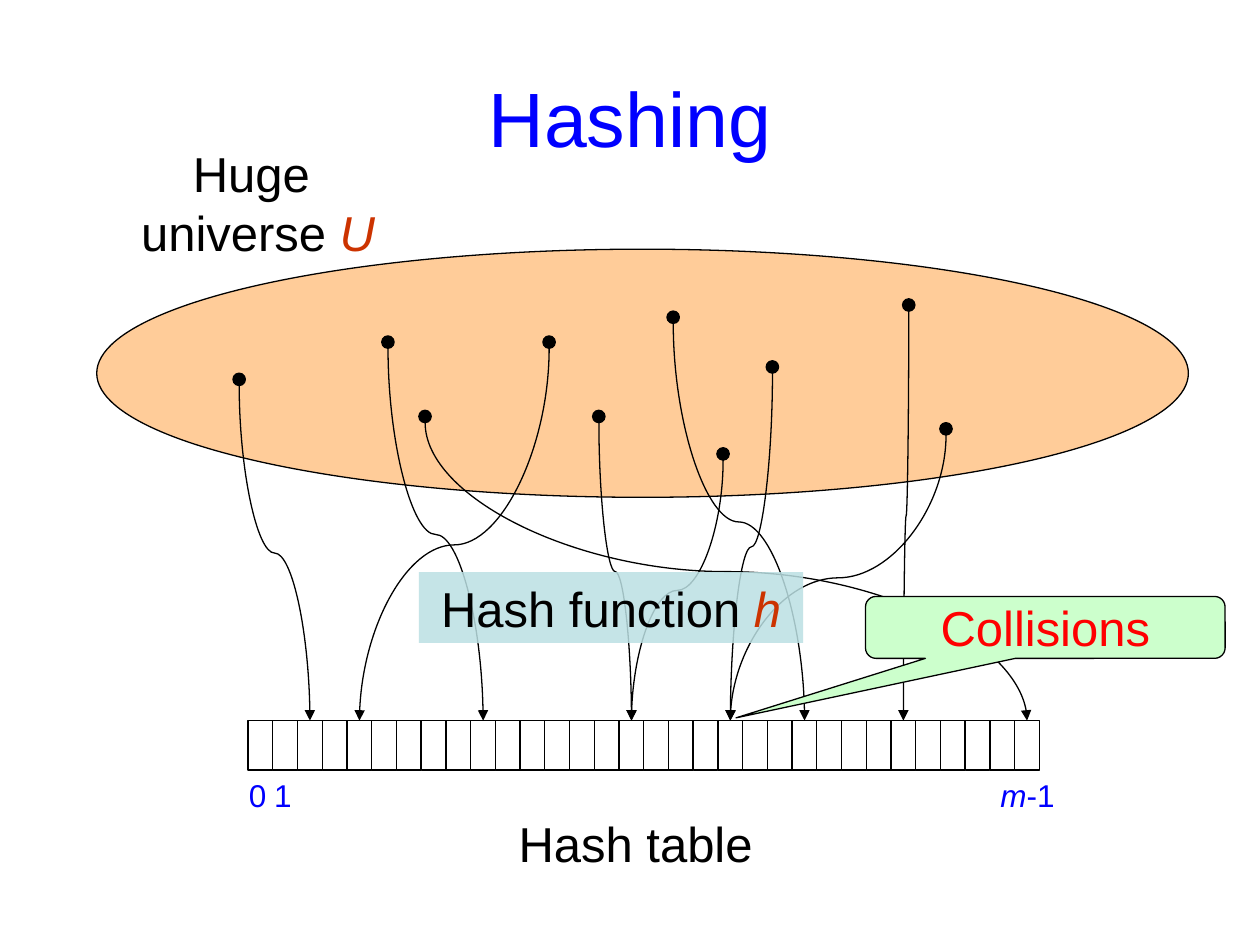
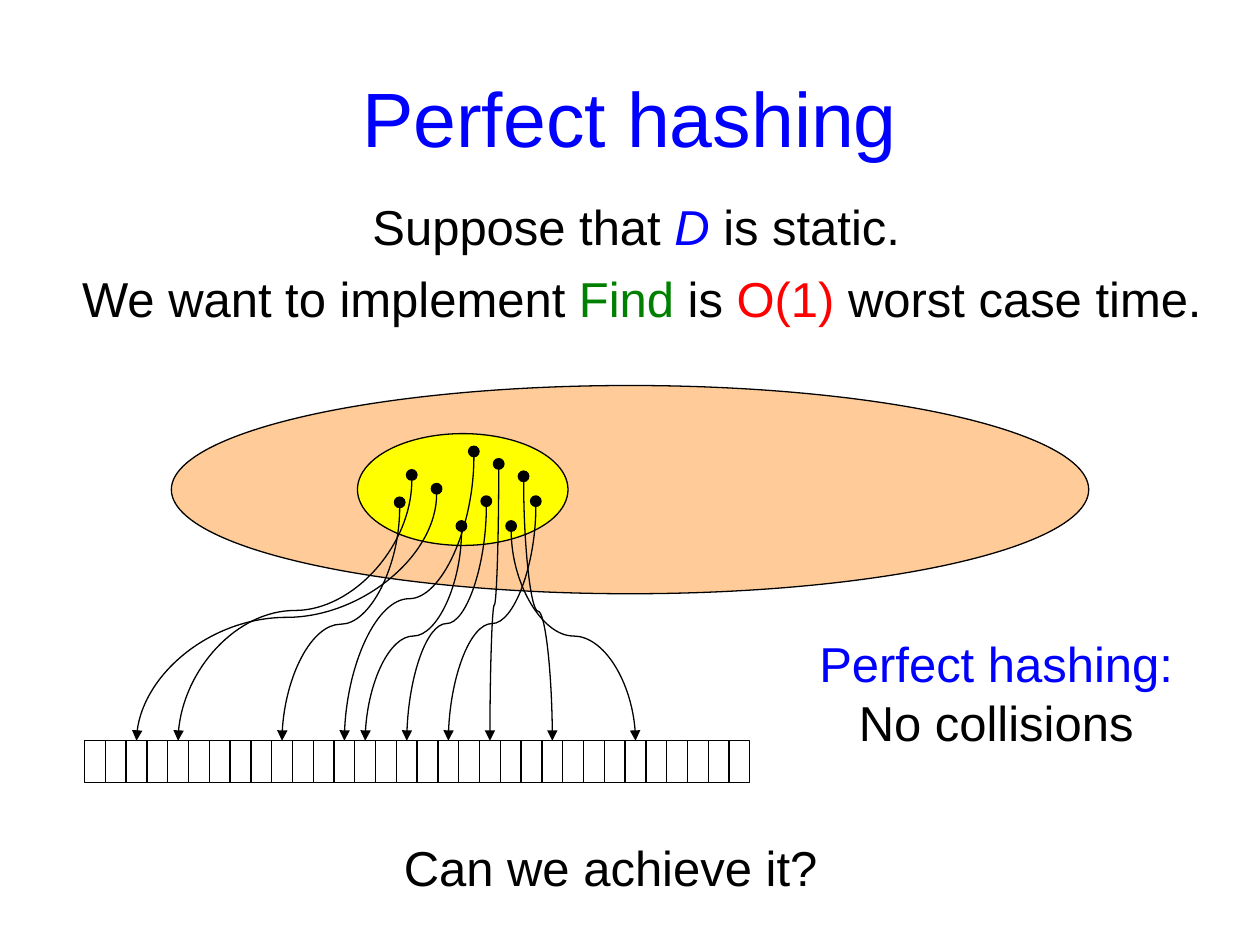
import pptx
import pptx.util
import pptx.dml.color
import pptx.enum.shapes
import pptx.enum.text
import pptx.oxml.ns
import pptx.oxml.xmlchemy

Pt = pptx.util.Pt
qn = pptx.oxml.ns.qn
Node = pptx.oxml.xmlchemy.OxmlElement
Kind = pptx.enum.shapes.MSO_SHAPE
Anchor = pptx.enum.text.MSO_ANCHOR

HUES = {
    "black": "000000",
    "blue": "0000FF",
    "rust": "CC3300",
    "green": "008000",
    "red": "FF0000",
    "peach": "FFCC99",
    "yellow": "FFFF00",
    "teal": "BBE0E3",
    "mint": "CCFFCC",
}
HUES = {name: pptx.dml.color.RGBColor.from_string(code) for name, code in HUES.items()}
FRAME = {"word_wrap": True, "auto_size": pptx.enum.text.MSO_AUTO_SIZE.NONE}
FONT = {"name": "Arial", "bold": False}
CELLS = 32


def draw(page, kind, box, fill=None, edge="black"):
    """Add a preset shape with an optional fill and outline."""
    shape = page.shapes.add_shape(kind, *map(Pt, box))
    shape.shadow.inherit = False
    if fill:
        shape.fill.solid()
        shape.fill.fore_color.rgb = HUES[fill]
    else:
        shape.fill.background()
    if edge:
        shape.line.color.rgb = HUES[edge]
        shape.line.width = Pt(0.75)
    else:
        shape.line.fill.background()
    return shape


def write(shape, runs, size=28, anchor=Anchor.TOP):
    """Fill a shape with centred runs of (text, hue) or (text, hue, italic)."""
    frame = shape.text_frame
    for key, value in {**FRAME, "vertical_anchor": anchor}.items():
        setattr(frame, key, value)
    para = frame.paragraphs[0]
    para.alignment = pptx.enum.text.PP_ALIGN.CENTER
    for text, hue, *slant in runs:
        for row, part in enumerate(text.split("\n")):
            if row:
                para.add_line_break()
            if part:
                run = para.add_run()
                run.text = part
                look = {**FONT, "size": Pt(size), "italic": bool(slant)}
                for key, value in look.items():
                    setattr(run.font, key, value)
                run.font.color.rgb = HUES[hue]


# Each key is (x, y, slot): the centre of its dot and the cell it hashes to
PAGES = [
    {
        "title": "Hashing",
        "ovals": [((55.3, 142.4, 623.8, 141.8), "peach")],
        "dot": 7.1,
        "cell": (141.8, 411.8, 14.13, 28.3),
        "keys": [
            (136.7, 216.8, 2), (221.7, 195.5, 9), (242.9, 238, 31),
            (313.8, 195.5, 4), (384.7, 181.3, 22), (540.6, 245.1, 19),
            (413.2, 259.4, 15), (519.3, 174.3, 26), (441.4, 209.7, 19),
            (342.2, 238, 15),
        ],
        "bends": {3: 0.528},
        "texts": [
            ((33.8, 78.5, 219.6, 74.2), 28,
             [("Huge\n universe ", "black"), ("U", "rust", True)]),
            ((253.4, 461.5, 219.6, 41), 28, [("Hash table", "black")]),
            ((133.2, 439.9, 28.1, 28.8), 18, [("0", "blue")]),
            ((147.6, 439.9, 28.1, 28.8), 18, [("1", "blue")]),
            ((562.3, 439.9, 49.7, 28.8), 18,
             [("m", "blue", True), ("-1", "blue")]),
        ],
    },
    {
        "title": "Perfect hashing",
        "ovals": [((97.9, 220.3, 524.2, 119), "peach"),
                  ((204.3, 247.8, 120.3, 63.9), "yellow")],
        "dot": 6,
        "cell": (48.3, 423.3, 11.88, 23.8),
        "keys": [
            (249.5, 279.3, 2), (228.4, 287.1, 9), (270.8, 258, 12),
            (235.3, 271.4, 4), (299.2, 272.2, 22), (285, 265.1, 19),
            (277.9, 286.4, 15), (292.1, 300.6, 26), (306.2, 286.4, 17),
            (263.7, 300.6, 13),
        ],
        "bends": {},
        "texts": [
            ((126, 108.7, 475.2, 41), 28,
             [("Suppose that ", "black"), ("D", "blue", True),
              (" is static.", "black")]),
            ((33.8, 149.8, 666, 41), 28,
             [("We want to implement ", "black"), ("Find", "green"),
              (" is ", "black"), ("O(1)", "red"),
              (" worst case time.", "black")]),
            ((459.4, 358.6, 219.6, 74.2), 28,
             [("Perfect hashing:\n", "blue"), ("No collisions", "black")]),
            ((104.4, 475.2, 488.9, 41), 28, [("Can we achieve it?", "black")]),
        ],
    },
]

deck = pptx.Presentation()
deck.slide_width, deck.slide_height = Pt(720), Pt(540)

for plan in PAGES:
    page = deck.slides.add_slide(deck.slide_layouts[6])

    # Universe and its subset
    for box, hue in plan["ovals"]:
        draw(page, Kind.OVAL, box, hue)

    # Title and captions
    title = page.shapes.add_textbox(Pt(36), Pt(21.6), Pt(648), Pt(90))
    write(title, [(plan["title"], "blue")], 44, Anchor.MIDDLE)
    for box, size, runs in plan["texts"]:
        write(page.shapes.add_textbox(*map(Pt, box)), runs, size)

    # Keys
    dot = plan["dot"]
    for x, y, slot in plan["keys"]:
        draw(page, Kind.OVAL, (x - dot / 2, y - dot / 2, dot, dot), "black")

    # Arrows from keys to cells: a sideways curve, turned to run downwards
    left, top, wide, high = plan["cell"]
    for order, (x, y, slot) in enumerate(plan["keys"]):
        start = y + dot / 2
        end = left + (slot + 0.5) * wide
        drop, shift = top - start, abs(end - x)
        mid_x, mid_y = (x + end) / 2, (start + top) / 2
        arrow = page.shapes.add_connector(
            pptx.enum.shapes.MSO_CONNECTOR.CURVE,
            Pt(mid_x - drop / 2), Pt(mid_y - shift / 2),
            Pt(mid_x + drop / 2), Pt(mid_y + shift / 2))
        arrow.line.color.rgb = HUES["black"]
        arrow.line.width = Pt(0.75)
        props = arrow._element.spPr
        frame = props.find(qn("a:xfrm"))
        frame.set("rot", str((270 if end > x else 90) * 60000))
        if end > x:
            frame.set("flipH", "1")
        guide = Node("a:gd")
        guide.set("name", "adj1")
        guide.set("fmla", f"val {plan['bends'].get(order, 0.5) * 100000:.0f}")
        props.find(qn("a:prstGeom")).get_or_add_avLst().append(guide)
        tip = Node("a:tailEnd")
        tip.set("type", "triangle")
        props.find(qn("a:ln")).append(tip)
        props.append(Node("a:effectLst"))

    # Hash table cells
    for slot in range(CELLS):
        draw(page, Kind.RECTANGLE, (left + slot * wide, top, wide, high))

# Hash function label, slightly see-through
page = deck.slides[0]
label = draw(page, Kind.RECTANGLE, (239.4, 326.9, 219.6, 40.6), "teal", None)
write(label, [("Hash function ", "black"), ("h", "rust", True)])
alpha = Node("a:alpha")
alpha.set("val", "85000")
label._element.spPr.find(qn("a:solidFill"))[0].append(alpha)

# Collisions callout
note = draw(page, Kind.ROUNDED_RECTANGULAR_CALLOUT, (494.6, 340.8, 205.5, 35.4), "mint")
for spot, value in enumerate((-0.86, 1.46, 0.17)):
    note.adjustments[spot] = value
write(note, [("Collisions", "red")], anchor=Anchor.MIDDLE)

deck.save("out.pptx")
